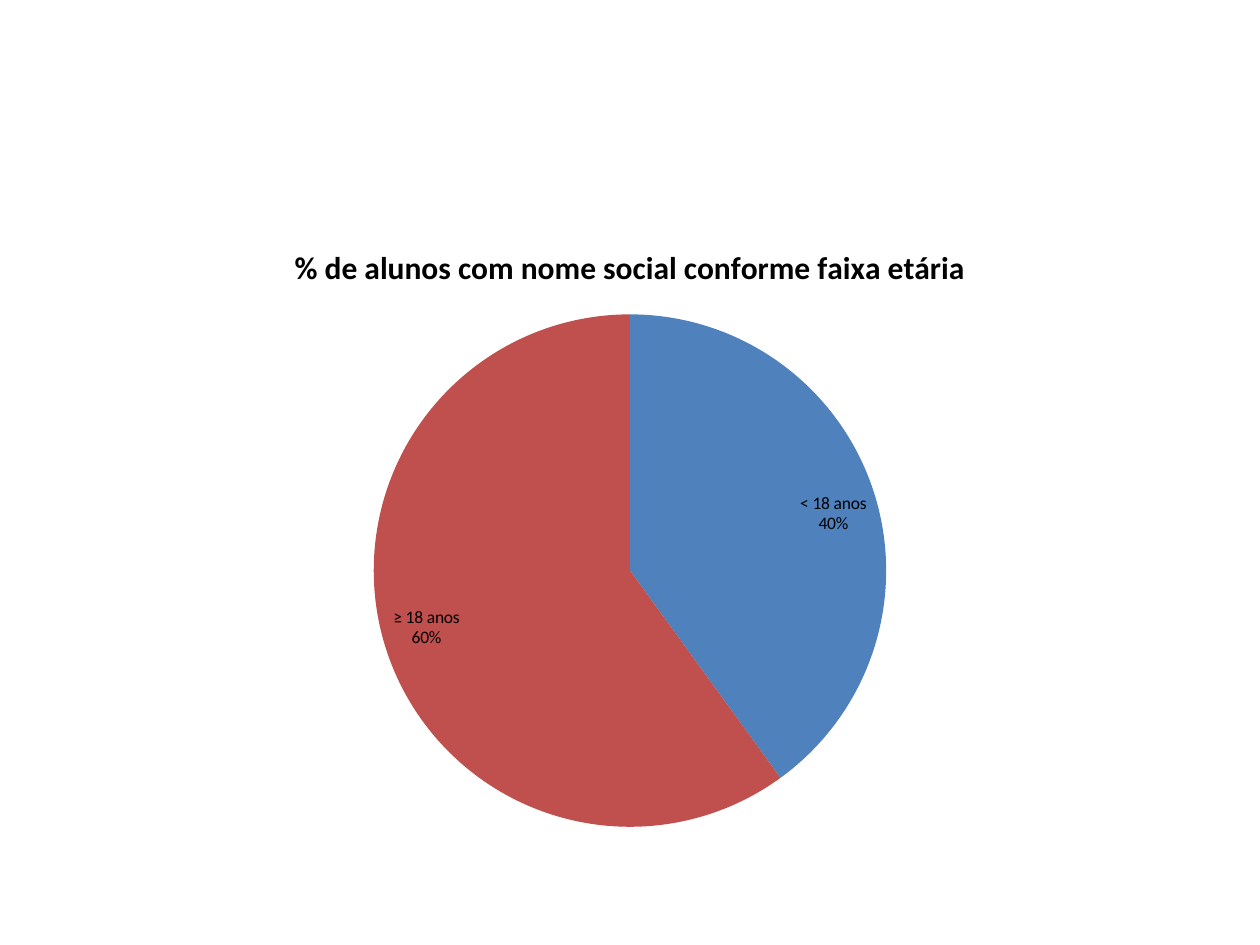
from dataclasses import dataclass

from lxml import etree
from pptx import Presentation
from pptx.chart.data import CategoryChartData
from pptx.dml.color import RGBColor
from pptx.enum import chart as kinds
from pptx.oxml import ns
from pptx.util import Cm, Pt


@dataclass(frozen=True)
class Theme:
    font: str = "Calibri"
    ink: str = "000000"
    slices: tuple = ("4F81BD", "C0504D")
    title_size: int = 18
    label_size: int = 10


THEME = Theme()
TITLE = "% de alunos com nome social conforme faixa etária"
AGE_SHARES = {"< 18 anos": 40, "≥ 18 anos": 60}


def style_font(font, size, bold=False):
    font.name = THEME.font
    font.size = Pt(size)
    font.bold = bold
    font.color.rgb = RGBColor.from_string(THEME.ink)


def add_pie(page, left, top, width, height):
    data = CategoryChartData()
    data.categories = list(AGE_SHARES)
    data.add_series(TITLE, list(AGE_SHARES.values()))
    frame = page.shapes.add_chart(
        kinds.XL_CHART_TYPE.PIE, left, top, width, height, data)
    pie = frame.chart
    pie.has_legend = False
    style_font(pie.font, THEME.label_size)
    return pie


def title_pie(pie):
    pie.has_title = True
    pie.chart_title.include_in_layout = False
    span = pie.chart_title.text_frame.paragraphs[0].add_run()
    span.text = TITLE
    style_font(span.font, THEME.title_size, bold=True)


def color_slices(plot):
    plot.vary_by_categories = True
    for index, color in enumerate(THEME.slices):
        fill = plot.series[0].points[index].format.fill
        fill.solid()
        fill.fore_color.rgb = RGBColor.from_string(color)


def label_slices(plot):
    plot.has_data_labels = True
    labels = plot.data_labels
    labels.show_value = False
    labels.show_category_name = True
    labels.show_percentage = True
    labels.number_format = "0%"
    labels.number_format_is_linked = False
    labels.position = kinds.XL_LABEL_POSITION.INSIDE_END
    style_font(labels.font, THEME.label_size)
    # Category and percentage stand on separate lines
    separator = etree.Element(ns.qn("c:separator"))
    separator.text = "\n"
    dlbls = plot._element.find(ns.qn("c:dLbls"))
    dlbls.find(ns.qn("c:showPercent")).addnext(separator)
    bubble = dlbls.find(ns.qn("c:showBubbleSize"))
    if bubble is not None:
        bubble.addnext(separator)


def main():
    deck = Presentation()
    deck.slide_width, deck.slide_height = Cm(25.4), Cm(19.05)
    page = deck.slides.add_slide(deck.slide_layouts[6])

    # Pie of students by age group
    pie = add_pie(page, Cm(1.27), Cm(4.45), Cm(22.86), Cm(12.57))
    title_pie(pie)
    color_slices(pie.plots[0])
    label_slices(pie.plots[0])

    deck.save("out.pptx")


if __name__ == "__main__":
    main()
